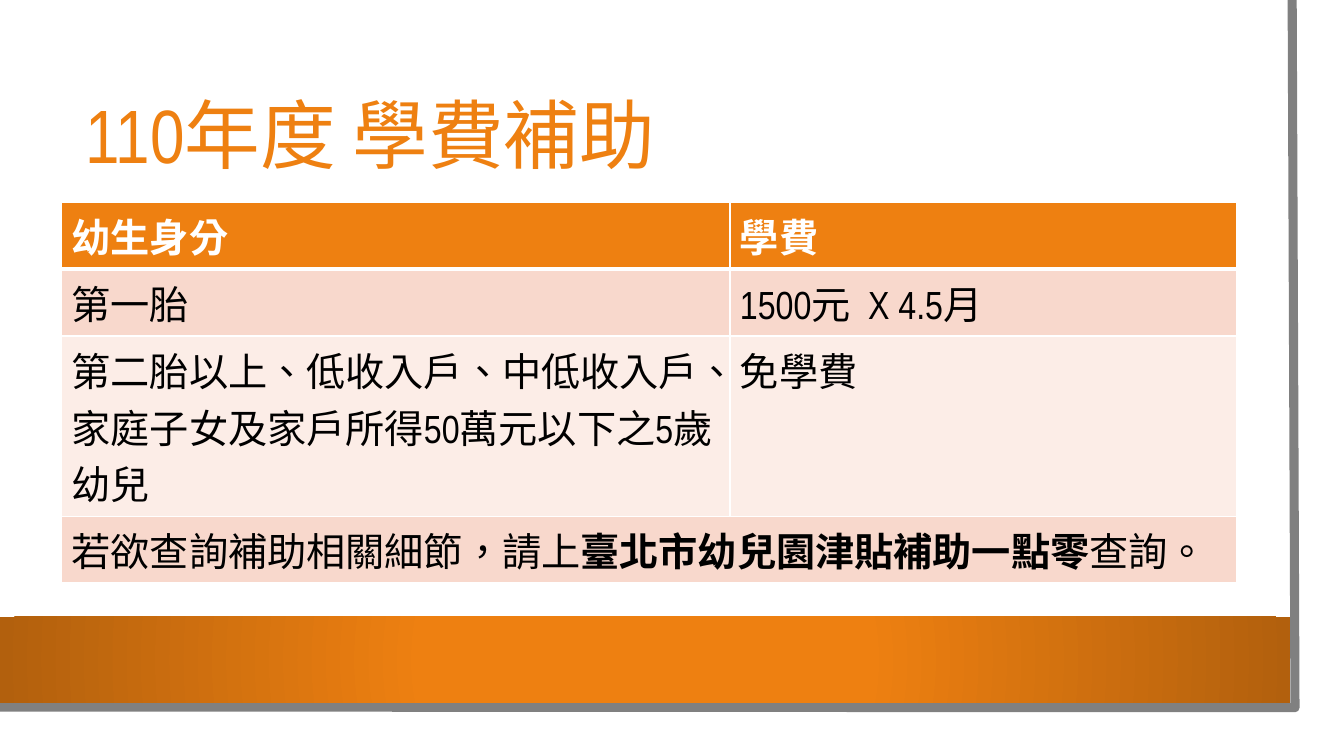
"""Build the tuition subsidy slide with its framed card and fee table."""
from lxml.etree import SubElement
from pptx import Presentation
from pptx.dml.color import RGBColor
from pptx.enum.lang import MSO_LANGUAGE_ID
from pptx.enum.shapes import MSO_SHAPE
from pptx.enum.text import MSO_ANCHOR, PP_ALIGN
from pptx.oxml import parse_xml
from pptx.oxml.ns import nsdecls, qn
from pptx.util import Pt

ORANGE = RGBColor(0xEE, 0x80, 0x11)
BROWN = RGBColor(0xB2, 0x60, 0x0D)
ROSE = RGBColor(0xF8, 0xD8, 0xCC)
BLUSH = RGBColor(0xFC, 0xED, 0xE7)
GREY = RGBColor(0x80, 0x80, 0x80)
WHITE = RGBColor(0xFF, 0xFF, 0xFF)
BLACK = RGBColor(0, 0, 0)
LATIN = "Arial Narrow"
HAN = "Noto Sans CJK SC"


def style(run, size, color, bold=False, face=LATIN):
    font = run.font
    font.size, font.bold, font.name = Pt(size), bold, face
    font.color.rgb = color
    font.language_id = MSO_LANGUAGE_ID.TRADITIONAL_CHINESE
    SubElement(run.font._element, qn("a:ea"), typeface=HAN)


def edge(cell, side, width):
    props = cell._tc.get_or_add_tcPr()
    props.append(parse_xml(
        f'<a:{side} {nsdecls("a")} w="{Pt(width)}"><a:solidFill>'
        f'<a:srgbClr val="{WHITE}"/></a:solidFill></a:{side}>'))


prs = Presentation()
prs.slide_width, prs.slide_height = Pt(960), Pt(540)
slide = prs.slides.add_slide(prs.slide_layouts[5])
shapes = slide.shapes

card = shapes.add_shape(MSO_SHAPE.RECTANGLE, 0, 0, Pt(943), Pt(523.5))
card.fill.solid()
card.fill.fore_color.rgb = WHITE

pen = shapes.build_freeform(Pt(923), 0)
pen.add_line_segments([(Pt(925), Pt(505.5)), (Pt(-2), Pt(505))], close=False)
frame = pen.convert_to_shape()
frame.fill.background()
frame.line.color.rgb = GREY
frame.line.width = Pt(6.5)

band = shapes.add_shape(MSO_SHAPE.RECTANGLE, 0, Pt(440.7), Pt(921.6), Pt(61.2))
band.fill.background()
blank = band.element.spPr.find(qn("a:noFill"))
band.element.spPr.replace(blank, parse_xml(
    f'<a:gradFill {nsdecls("a")} rotWithShape="1"><a:gsLst>'
    f'<a:gs pos="34000"><a:srgbClr val="{ORANGE}"/></a:gs>'
    f'<a:gs pos="100000"><a:srgbClr val="{BROWN}"/></a:gs></a:gsLst>'
    '<a:path path="circle"><a:fillToRect l="50000" t="50000" r="50000" '
    'b="50000"/></a:path></a:gradFill>'))

for shape in (card, frame, band):
    shape.shadow.inherit = False
for shape in (card, band):
    shape.line.fill.background()

title = shapes.title
shapes.element.append(title.element)
title.left, title.top, title.width, title.height = Pt(54), Pt(54), Pt(819), Pt(91)
title.text_frame.text = "110年度 學費補助"
title.text_frame.word_wrap = True
title.text_frame.vertical_anchor = MSO_ANCHOR.MIDDLE
head = title.text_frame.paragraphs[0]
head.alignment = PP_ALIGN.LEFT
head.line_spacing = 0.9
style(head.runs[0], 54, ORANGE)

rows = [
    (["幼生身分", "學費"], 44, ORANGE),
    (["第一胎", "1500元  X 4.5月"], 44, ROSE),
    (["第二胎以上、低收入戶、中低收入戶、家庭子女及家戶所得50萬元以下之5歲幼兒",
      "免學費"], 116.5, BLUSH),
    (["", ""], 44, ROSE),
]
table = shapes.add_table(4, 2, Pt(44), Pt(144.7), Pt(839.5), Pt(248.5)).table
table.columns[0].width, table.columns[1].width = Pt(477.4), Pt(362.1)
for r, (texts, height, fill) in enumerate(rows):
    table.rows[r].height = Pt(height)
    for c, text in enumerate(texts):
        cell = table.cell(r, c)
        cell.text = text
        for run in cell.text_frame.paragraphs[0].runs:
            style(run, 28, BLACK if r else WHITE, r == 0)
        for side in ("lnL", "lnR", "lnT", "lnB"):
            thick = (r, side) in ((0, "lnB"), (1, "lnT"))
            edge(cell, side, 3 if thick else 1)
        cell.fill.solid()
        cell.fill.fore_color.rgb = fill

table.cell(3, 0).merge(table.cell(3, 1))
note = table.cell(3, 0).text_frame.paragraphs[0]
for text, bold in (("若欲查詢補助相關細節，請上", False),
                   ("臺北市幼兒園津貼補助一點零", True), ("查詢。", False)):
    run = note.add_run()
    run.text = text
    style(run, 28, BLACK, bold, HAN)

prs.save("out.pptx")
